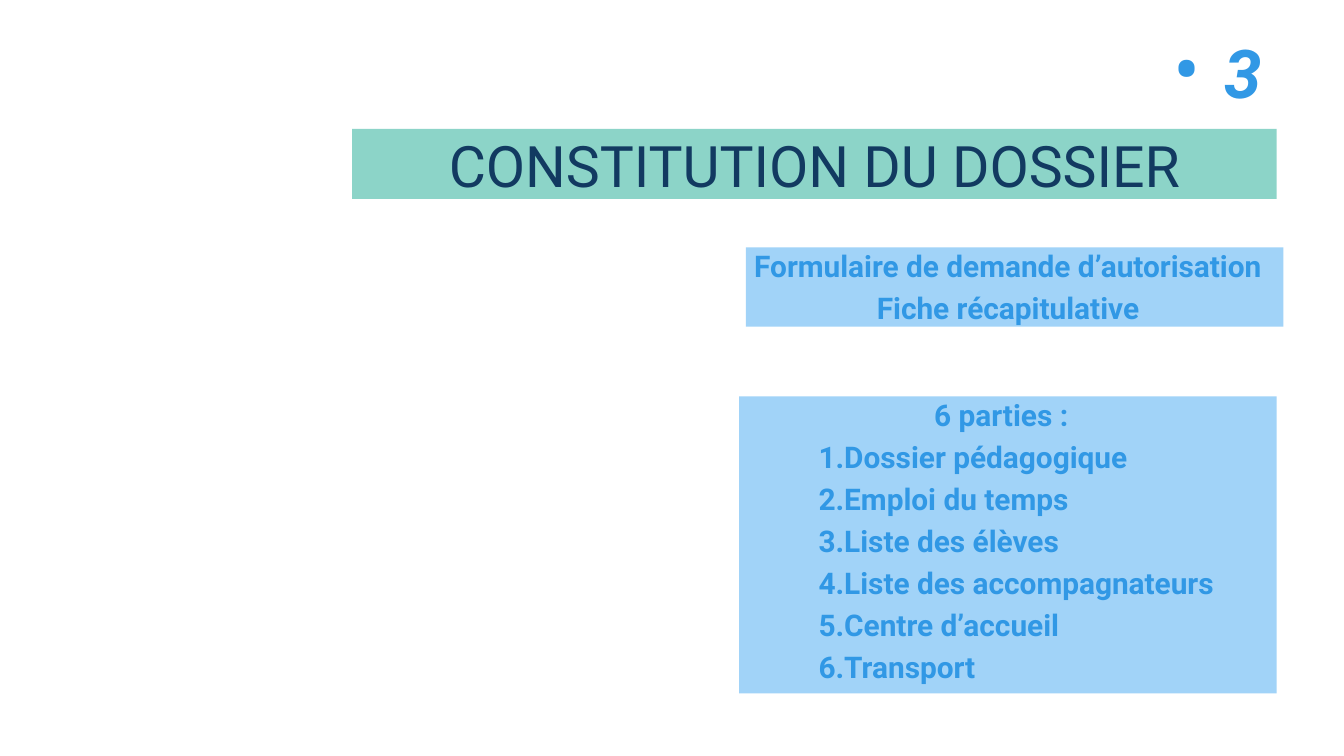
"""Build the slide on how the application file is put together."""
from lxml import etree
from pptx import Presentation
from pptx.dml.color import RGBColor
from pptx.enum.shapes import MSO_SHAPE
from pptx.enum.text import MSO_ANCHOR, MSO_AUTO_SIZE, PP_ALIGN
from pptx.oxml.ns import qn
from pptx.util import Inches, Pt

RECTANGLE = MSO_SHAPE.RECTANGLE
TOP, MIDDLE = MSO_ANCHOR.TOP, MSO_ANCHOR.MIDDLE
NO_AUTOFIT = MSO_AUTO_SIZE.NONE
LEFT, CENTER = PP_ALIGN.LEFT, PP_ALIGN.CENTER

SLIDE_WIDTH = 10
FONT = "Roboto"
NAVY, BLUE, LIGHT_BLUE, GREEN = "123A61", "3198E5", "A1D3F8", "8CD4C8"
PARTS = [
    "Dossier pédagogique",
    "Emploi du temps",
    "Liste des élèves",
    "Liste des accompagnateurs",
    "Centre d’accueil",
    "Transport",
]
FORMS = ["Formulaire de demande d’autorisation", "Fiche récapitulative"]


def color(hex_value):
    """Return the colour for a hex string."""
    return RGBColor.from_string(hex_value)


def place(shape, left, top, width, height):
    """Move and size a shape, in inches."""
    shape.left, shape.top = Inches(left), Inches(top)
    shape.width, shape.height = Inches(width), Inches(height)


def fill_shape(shape, hex_value):
    """Give a shape a plain fill without a line."""
    shape.fill.solid()
    shape.fill.fore_color.rgb = color(hex_value)
    shape.line.fill.background()


def write_lines(shape, lines, size, hex_value, alignment=CENTER, bold=True,
                italic=False, left_inset=0, anchor=TOP, gap=3.75):
    """Write one paragraph per line, format it and return the paragraphs."""
    frame = shape.text_frame
    frame.text = "\n".join(lines)
    frame.word_wrap = True
    frame.auto_size = NO_AUTOFIT
    frame.vertical_anchor = anchor
    frame.margin_left, frame.margin_right = Inches(left_inset), Inches(0.1)
    frame.margin_top = frame.margin_bottom = 0
    for index, paragraph in enumerate(frame.paragraphs):
        paragraph.alignment = alignment
        paragraph.space_before = Pt(gap if index else 0)
        font = paragraph.runs[0].font
        font.name, font.size = FONT, Pt(size)
        font.bold, font.italic = bold, italic
        font.color.rgb = color(hex_value)
    return frame.paragraphs


def set_bullet(paragraph, margin, indent, *elements):
    """Set the indents and the bullet elements of a paragraph."""
    properties = paragraph._p.get_or_add_pPr()
    properties.set("marL", str(Inches(margin)))
    properties.set("indent", str(Inches(indent)))
    for tag, attributes in elements:
        etree.SubElement(properties, qn(tag), attributes)


def add_title(slide):
    """Fill the title placeholder."""
    title = slide.shapes.title
    place(title, 2.62, 0.96, 6.88, 0.52)
    fill_shape(title, GREEN)
    paragraphs = write_lines(title, ["CONSTITUTION DU DOSSIER"], 30.6, NAVY,
                             bold=False, left_inset=0.1, anchor=MIDDLE)
    paragraphs[0].line_spacing = Pt(37.8)


def add_section_number(slide):
    """Add the bulleted section number."""
    box = slide.shapes.add_textbox(0, 0, 0, 0)
    place(box, 8.73, 0.23, 0.96, 0.61)
    paragraphs = write_lines(box, ["3"], 36, BLUE, LEFT, italic=True)
    set_bullet(paragraphs[0], 0.38, -0.38, ("a:buSzPct", {"val": "120000"}),
               ("a:buFont", {"typeface": FONT}), ("a:buChar", {"char": "•"}))


def add_parts_list(slide):
    """Fill the body placeholder with the numbered parts."""
    body = slide.placeholders[1]
    place(body, 5.5, 2.95, 4, 2.21)
    fill_shape(body, LIGHT_BLUE)
    heading, *items = write_lines(body, ["6 parties :", *PARTS], 16, BLUE,
                                  gap=3.3)
    set_bullet(heading, 0, 0, ("a:buNone", {}))
    for item in items:
        item.alignment = LEFT
        set_bullet(item, 0.2, 0.39, ("a:buFont", {"typeface": FONT}),
                   ("a:buAutoNum", {"type": "arabicPeriod"}))


def add_forms_box(slide):
    """Add the box naming the forms."""
    box = slide.shapes.add_shape(RECTANGLE, 0, 0, 0, 0)
    place(box, 5.55, 1.84, 4, 0.59)
    box.shadow.inherit = False
    fill_shape(box, LIGHT_BLUE)
    write_lines(box, FORMS, 16, BLUE)


def main():
    """Build and save the presentation."""
    presentation = Presentation()
    presentation.slide_width = Inches(SLIDE_WIDTH)
    presentation.slide_height = Inches(SLIDE_WIDTH * 9 / 16)
    slide = presentation.slides.add_slide(presentation.slide_layouts[1])
    add_title(slide)
    add_section_number(slide)
    add_parts_list(slide)
    add_forms_box(slide)
    presentation.save("out.pptx")


if __name__ == "__main__":
    main()
